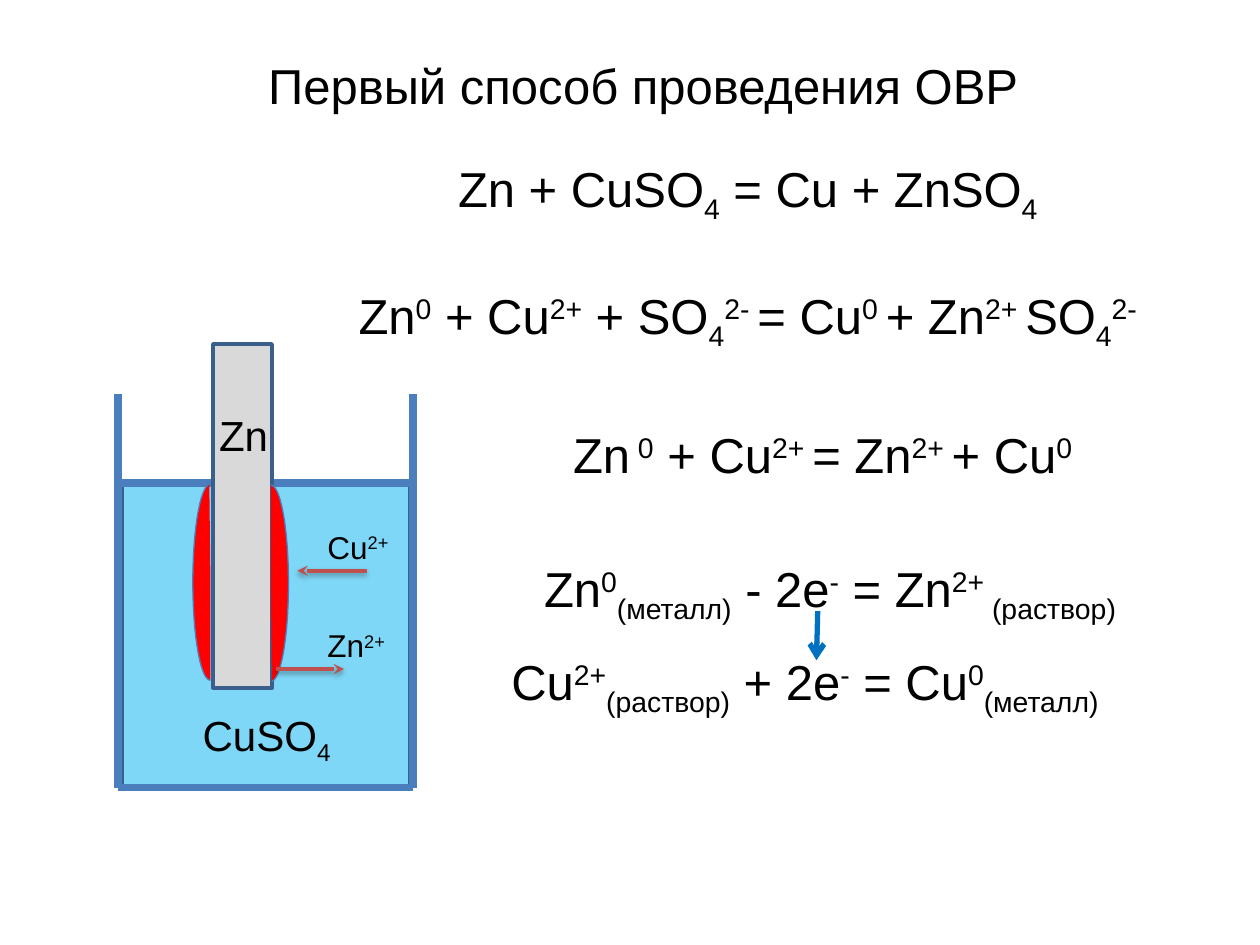
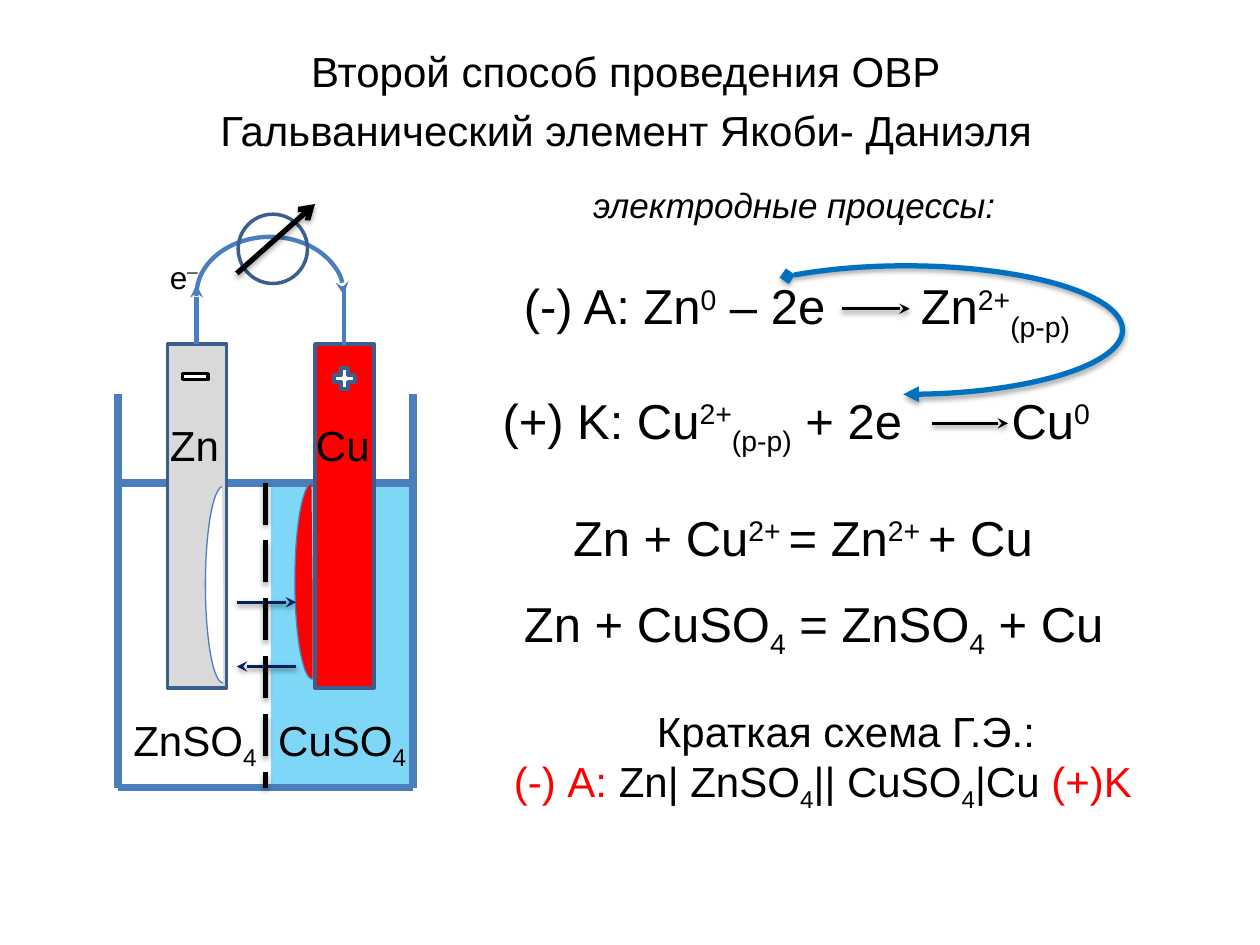
"""Build two slides on redox reactions: direct contact and the galvanic cell."""
from lxml import etree
from pptx import Presentation
from pptx.dml.color import RGBColor
from pptx.enum.dml import MSO_LINE
from pptx.enum.shapes import MSO_CONNECTOR, MSO_SHAPE
from pptx.enum.text import PP_ALIGN
from pptx.oxml.ns import qn
from pptx.util import Inches, Pt

RECT, OVAL, ARC = MSO_SHAPE.RECTANGLE, MSO_SHAPE.OVAL, MSO_SHAPE.ARC
MINUS, PLUS = MSO_SHAPE.MATH_MINUS, MSO_SHAPE.MATH_PLUS
STRAIGHT, LONG_DASH = MSO_CONNECTOR.STRAIGHT, MSO_LINE.LONG_DASH
CENTER = PP_ALIGN.CENTER

FONT = "Arial"
BLACK, WHITE, RED, GREY = "000000", "FFFFFF", "FF0000", "D9D9D9"
GLASS, EDGE, LIQUID = "4B7EBC", "3A5F8C", "00B0F0"
ION, NAVY, BLUE = "C0504D", "002060", "0070C0"

LEFT, RIGHT, RIM, LEVEL, BOTTOM = 0.94, 3.28, 3.13, 3.83, 6.25
SCRIPTS = {"^": 30000, "_": -25000, "'": 60000}
SOFT, STRONG = (38, 1.6), (35, 1.8)
HALF_ELLIPSE = (162, 53.61)

ION_ARROW = {"color": ION, "width": 2, "tail": "stealth", "shadow": SOFT}
CELL_ARROW = {**ION_ARROW, "color": NAVY}
REACTION_ARROW = {**ION_ARROW, "color": BLACK}
WIRE = {"color": GLASS, "width": 2.5}
OUTLINE = {"color": EDGE, "width": 2}
THIN = {"color": GLASS, "width": 0.75}


def electrode(x, fill):
    return RECT, (x, 2.73, 0.47, 2.73), {"fill": fill, "line": OUTLINE}


def deposit(x, y, fill, rotation=180):
    return ARC, (x, y, 0.28, 1.56), {
        "fill": fill, "line": THIN, "adjust": HALF_ELLIPSE, "rotation": rotation}


SLIDES = [
    {
        "liquid": (0.97, 3.82, 2.28, 2.42),
        "liquid_line": OUTLINE,
        "shapes": [
            electrode(1.69, GREY),
            deposit(1.53, 3.84, RED),
            deposit(2.01, 3.85, RED, 0),
        ],
        "lines": [
            ((2.91, 4.53), (2.36, 4.53), ION_ARROW),
            ((2.19, 5.31), (2.73, 5.31), ION_ARROW),
            ((6.49, 4.85), (6.48, 5.24), {"color": BLUE, "width": 3, "tail": "arrow"}),
        ],
        "texts": [
            ((2.03, 0.39, 6.48, 0.57), 28, ["Первый способ проведения ОВР"], {}),
            ((2.42, 1.21, 7.03, 1.99), 28, [
                "Zn + CuSO{_4} = Cu + ZnSO{_4}",
                "Zn{^0} + Cu{^2+} + SO{_4}{^2- }= Cu{^0 }+ Zn{^2+ }SO{_4}{^2-}",
            ], {"centered": (0, 1), "gap": 34}),
            ((4.45, 3.32, 4.43, 0.57), 28,
             ["Zn{^ 0} + Cu{^2+ }= Zn{^2+ }+ Cu{^0}"], {"wrap": False}),
            ((4.22, 4.38, 5.16, 0.57), 28,
             ["Zn{^0}{_(металл)} - 2е{^-} = Zn{^2+ }{_(раствор)}"], {}),
            ((3.96, 5.12, 5.35, 0.63), 28,
             ["Cu{^2+}{_(раствор)} + 2е{^-} = Cu{^0}{_(металл)}"], {}),
            ((1.51, 5.58, 1.41, 0.5), 24, ["CuSO{_4}"], {}),
            ((1.64, 3.2, 0.63, 0.5), 24, ["Zn"], {}),
            ((2.5, 4.92, 0.69, 0.4), 18, ["Zn{^2+}"], {"wrap": False}),
            ((2.5, 4.14, 0.72, 0.4), 18, ["Cu{^2+}"], {"wrap": False}),
        ],
    },
    {
        "liquid": (2.15, 3.83, 1.1, 2.42),
        "liquid_line": None,
        "shapes": [
            electrode(1.33, GREY),
            electrode(2.5, RED),
            deposit(1.63, 3.86, WHITE),
            deposit(2.34, 3.83, RED),
            (ARC, (1.56, 1.88, 1.17, 0.92),
             {"line": {**WIRE, "tail": "stealth"}, "adjust": (107.39, 0)}),
            (OVAL, (1.89, 1.7, 0.55, 0.55), {"line": OUTLINE}),
            (MINUS, (1.41, 2.89, 0.28, 0.2),
             {"fill": WHITE, "line": {"color": BLACK, "width": 2}}),
            (PLUS, (2.62, 2.89, 0.23, 0.23), {"fill": WHITE, "line": OUTLINE}),
            (ARC, (5.47, 2.11, 3.44, 1.02), {
                "line": {"color": BLUE, "width": 3, "head": "diamond",
                         "tail": "triangle", "shadow": STRONG},
                "adjust": (122.65, 55.44)}),
        ],
        "lines": [
            ((1.56, 2.73), (1.56, 2.26), {**WIRE, "tail": "stealth"}),
            ((2.73, 2.74), (2.73, 2.27), WIRE),
            ((1.88, 2.17), (2.5, 1.62),
             {"color": BLACK, "width": 3, "tail": "arrow", "shadow": STRONG}),
            ((2.35, 5.29), (1.88, 5.29), CELL_ARROW),
            ((1.88, 4.78), (2.35, 4.78), CELL_ARROW),
            ((2.11, LEVEL), (2.11, BOTTOM),
             {"color": BLACK, "width": 3, "dash": LONG_DASH, "shadow": STRONG}),
            ((6.68, 2.45), (7.22, 2.45), REACTION_ARROW),
            ((7.4, 3.36), (8, 3.36), REACTION_ARROW),
        ],
        "texts": [
            ((2.37, 0.31, 5.25, 0.51), 24, ["Второй способ проведения ОВР"],
             {"wrap": False}),
            ((1.65, 0.78, 6.71, 0.51), 24, ["Гальванический элемент Якоби- Даниэля"],
             {"wrap": False}),
            ((4.61, 1.41, 3.57, 0.44), 20, ["электродные процессы:"],
             {"wrap": False, "italic": True}),
            ((4.06, 2.14, 4.92, 0.7), 28,
             ["(-) A: Zn{^0} – 2e\tZn{^2+}{_(р-р)}"], {"tab": 3.15}),
            ((3.89, 3.05, 5.4, 0.57), 28,
             ["(+) K: Cu{^2+}{_(р-р)} + 2e\tCu{^0}"], {"tab": 4.04}),
            ((4.45, 3.98, 4.06, 0.57), 28, ["Zn + Cu{^2+ }= Zn{^2+ }+ Cu"],
             {"wrap": False}),
            ((4.06, 4.66, 4.89, 0.57), 28, ["Zn + CuSO{_4} = ZnSO{_4} + Cu"],
             {"wrap": False}),
            ((3.98, 5.55, 5.47, 0.91), 24, [
                "Краткая схема Г.Э.:",
                "{!(-) А: }Zn| ZnSO{_4}|| CuSO{_4}|Cu {!(+)K}",
            ], {"centered": (0,)}),
            ((0.96, 5.62, 1.41, 0.5), 24, ["ZnSO{_4}"], {}),
            ((2.11, 5.62, 1.41, 0.5), 24, ["CuSO{_4}"], {}),
            ((1.25, 3.28, 0.62, 0.51), 24, ["Zn"], {}),
            ((2.41, 3.28, 0.7, 0.51), 24, ["Cu"], {}),
            ((1.25, 1.95, 0.44, 0.4), 18, ["e{'_}"], {"wrap": False}),
        ],
    },
]


def rgb(value):
    return RGBColor.from_string(value)


def inches(values):
    return [Inches(v) for v in values]


def add_xml(parent, tag, **attrs):
    return etree.SubElement(parent, qn(tag), {k: str(v) for k, v in attrs.items()})


def style_line(obj, fmt):
    line = obj.line
    if fmt:
        line.color.rgb = rgb(fmt["color"])
        line.width = Pt(fmt["width"])
        if "dash" in fmt:
            line.dash_style = fmt["dash"]
        ln = obj._element.spPr.find(qn("a:ln"))
        for end in ("head", "tail"):
            if end in fmt:
                add_xml(ln, f"a:{end}End", type=fmt[end])
    else:
        line.fill.background()
    effects = add_xml(obj._element.spPr, "a:effectLst")
    if fmt and "shadow" in fmt:
        alpha, dist = fmt["shadow"]
        outer = add_xml(effects, "a:outerShdw", blurRad=Pt(3.1), dist=Pt(dist),
                        dir=5400000, rotWithShape=0)
        add_xml(add_xml(outer, "a:srgbClr", val=BLACK), "a:alpha", val=alpha * 1000)


def add_line(s, start, end, fmt):
    style_line(s.shapes.add_connector(STRAIGHT, *inches(start + end)), fmt)


def add_figure(s, kind, box, fill=None, alpha=None, line=None, adjust=(), rotation=0):
    sp = s.shapes.add_shape(kind, *inches(box))
    sp.rotation = rotation
    for i, value in enumerate(adjust):
        sp.adjustments[i] = value
    if fill:
        sp.fill.solid()
        sp.fill.fore_color.rgb = rgb(fill)
        if alpha:
            color = sp._element.spPr.find(qn("a:solidFill"))[0]
            add_xml(color, "a:alpha", val=alpha * 1000)
    else:
        sp.fill.background()
    style_line(sp, line)


def add_runs(p, text, size, italic):
    for i, part in enumerate(text.replace("}", "{").split("{")):
        if not part:
            continue
        mark, part = (part[0], part[1:]) if i % 2 else ("", part)
        r = p.add_run()
        r.text = part
        for name, value in {"name": FONT, "size": Pt(size), "italic": italic}.items():
            setattr(r.font, name, value)
        r.font.color.rgb = rgb(RED if mark == "!" else BLACK)
        if mark in SCRIPTS:
            r._r.get_or_add_rPr().set("baseline", str(SCRIPTS[mark]))


def add_text(s, box, size, paragraphs, wrap=True, italic=None, centered=(), gap=0, tab=None):
    tf = s.shapes.add_textbox(*inches(box)).text_frame
    tf.word_wrap = wrap
    for i, text in enumerate(paragraphs):
        p = tf.add_paragraph() if i else tf.paragraphs[0]
        if i in centered:
            p.alignment = CENTER
        if i and gap:
            p.space_before = Pt(gap)
        if tab:
            tabs = add_xml(p._p.get_or_add_pPr(), "a:tabLst")
            add_xml(tabs, "a:tab", pos=Inches(tab), algn="l")
        add_runs(p, text, size, italic)


def add_beaker(s, liquid, liquid_line):
    add_figure(s, RECT, liquid, fill=LIQUID, alpha=50, line=liquid_line)
    for x in (LEFT, RIGHT):
        add_line(s, (x, RIM), (x, BOTTOM), {"color": GLASS, "width": 4.5})
    for y in (BOTTOM, LEVEL):
        add_line(s, (LEFT, y), (RIGHT, y), {"color": GLASS, "width": 4.5})


def main():
    prs = Presentation()
    prs.slide_width, prs.slide_height = inches((10, 7.5))
    for content in SLIDES:
        s = prs.slides.add_slide(prs.slide_layouts[6])
        add_beaker(s, content["liquid"], content["liquid_line"])
        for kind, box, fmt in content["shapes"]:
            add_figure(s, kind, box, **fmt)
        for start, end, fmt in content["lines"]:
            add_line(s, start, end, fmt)
        for box, size, paragraphs, fmt in content["texts"]:
            add_text(s, box, size, paragraphs, **fmt)
    prs.save("out.pptx")


if __name__ == "__main__":
    main()
